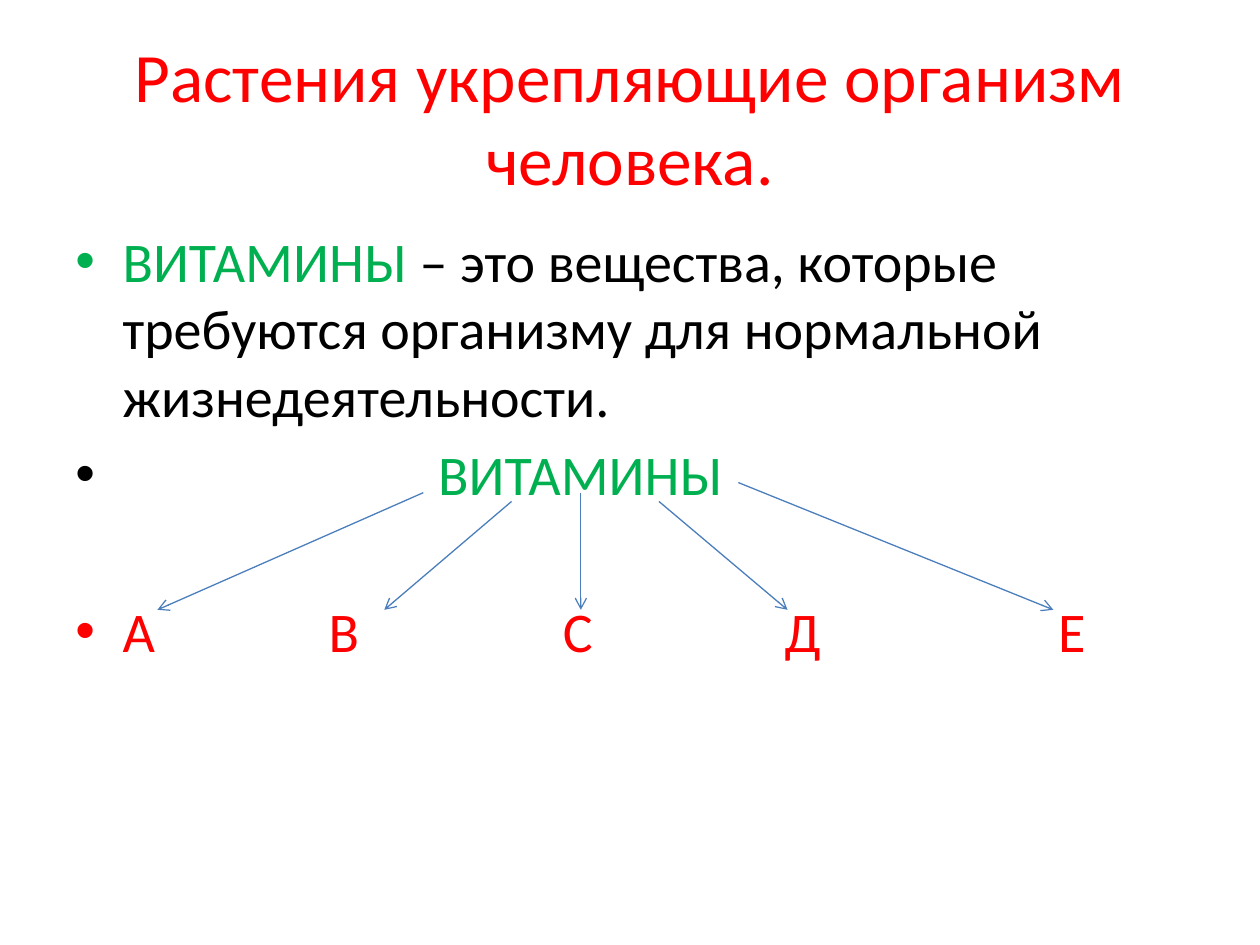
from dataclasses import dataclass

from lxml.etree import SubElement
from pptx import Presentation
from pptx.dml.color import RGBColor
from pptx.enum.shapes import MSO_CONNECTOR
from pptx.enum.text import MSO_ANCHOR, MSO_AUTO_SIZE, PP_ALIGN
from pptx.oxml.ns import qn
from pptx.util import Inches, Pt

COLUMNS, ROWS = 100, 75
CELL = Inches(0.1)
RED, GREEN, BLACK, BLUE = "FF0000", "00B050", "000000", "4B7EBC"
TEXT_SIZE = 32
HANG = 3.75


@dataclass(frozen=True)
class Point:
    text: str
    color: str
    bullet: str
    rest: str = ""
    indent: float = HANG
    before: float = 0
    tabs: tuple[float, ...] = ()


@dataclass(frozen=True)
class Arrow:
    start: tuple[float, float]
    end: tuple[float, float]


POINTS = (
    Point("ВИТАМИНЫ ", GREEN, GREEN,
          "– это вещества, которые требуются организму для нормальной жизнедеятельности."),
    Point("ВИТАМИНЫ", GREEN, BLACK, indent=28.8, before=6.4),
    Point("\tА\tВ\tС\tД\tЕ", RED, RED, indent=0, before=51,
          tabs=(HANG, 20.1, 38.7, 56.3, 78)),
)
LETTER_ROW = 48.4
ARROWS = (
    Arrow((33.6, 39.1), (12.5, LETTER_ROW)),
    Arrow((40.6, 39.8), (30.5, LETTER_ROW)),
    Arrow((46.1, 39.1), (46.1, LETTER_ROW)),
    Arrow((52.3, 39.8), (62.5, LETTER_ROW)),
    Arrow((58.6, 38.3), (83.6, LETTER_ROW)),
)


def grid(cells: float) -> int:
    return round(cells * CELL)


def rgb(color: str) -> RGBColor:
    return RGBColor.from_string(color)


def style(font, size: float, color: str) -> None:
    font.name = "Calibri"
    font.size = Pt(size)
    font.color.rgb = rgb(color)


def add_title(slide, text: str) -> None:
    title = slide.shapes.title
    title.left, title.top, title.width, title.height = map(grid, (5, 3, 90, 12.5))
    frame = title.text_frame
    frame.text = text
    frame.auto_size = MSO_AUTO_SIZE.NONE
    frame.vertical_anchor = MSO_ANCHOR.MIDDLE
    heading = frame.paragraphs[0]
    heading.alignment = PP_ALIGN.CENTER
    style(heading.font, 39.6, RED)


def add_bullet(paragraph, point: Point) -> None:
    properties = paragraph._p.get_or_add_pPr()
    properties.set("marL", str(grid(point.indent)))
    properties.set("indent", str(-grid(point.indent)))
    bullet_color = SubElement(properties, qn("a:buClr"))
    SubElement(bullet_color, qn("a:srgbClr"), val=point.bullet)
    SubElement(properties, qn("a:buFont"), typeface="Arial")
    SubElement(properties, qn("a:buChar"), char="•")
    if point.tabs:
        stops = SubElement(properties, qn("a:tabLst"))
        for position in point.tabs:
            SubElement(stops, qn("a:tab"), pos=str(grid(position)), algn="l")


def add_points(slide, points: tuple[Point, ...]) -> None:
    frame = slide.shapes.add_textbox(*map(grid, (5, 17.5, 90, 49.5))).text_frame
    frame.word_wrap = True
    for index, point in enumerate(points):
        paragraph = frame.add_paragraph() if index else frame.paragraphs[0]
        add_bullet(paragraph, point)
        if point.before:
            paragraph.space_before = Pt(point.before)
        style(paragraph.font, TEXT_SIZE, point.color)
        paragraph.add_run().text = point.text
        if point.rest:
            definition = paragraph.add_run()
            definition.text = point.rest
            definition.font.color.rgb = rgb(BLACK)


def add_arrow(slide, arrow: Arrow) -> None:
    connector = slide.shapes.add_connector(
        MSO_CONNECTOR.STRAIGHT, *map(grid, arrow.start + arrow.end))
    connector.line.color.rgb = rgb(BLUE)
    connector.line.width = Pt(0.75)
    SubElement(connector.line._get_or_add_ln(), qn("a:tailEnd"), type="arrow")
    SubElement(connector._element.spPr, qn("a:effectLst"))


def main() -> None:
    """Build the slide on vitamins and save it."""
    deck = Presentation()
    deck.slide_width, deck.slide_height = grid(COLUMNS), grid(ROWS)
    slide = deck.slides.add_slide(deck.slide_layouts[5])
    add_title(slide, "Растения укрепляющие организм человека.")
    add_points(slide, POINTS)
    for arrow in ARROWS:
        add_arrow(slide, arrow)
    deck.save("out.pptx")


if __name__ == "__main__":
    main()
